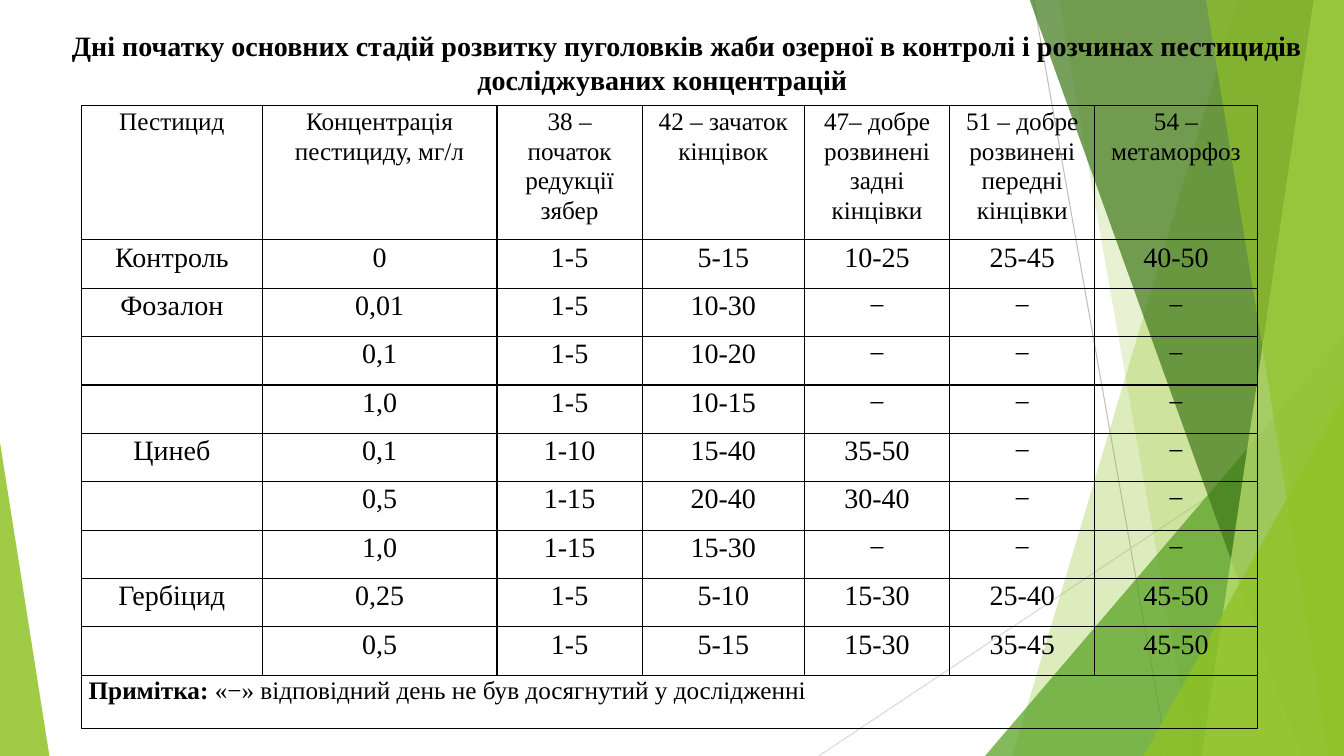
import pptx
import pptx.util
import pptx.dml.color
import pptx.enum.shapes
import pptx.enum.text
import pptx.oxml.ns
from lxml import etree

SCALE = 9144  # EMU in one px, 100 px to the inch
FONT = "Times New Roman"
COLORS = {
    "text": "000000", "border": "000000", "gray": "BFBFBF", "pale_gray": "D9D9D9",
    "leaf": "90C226", "green": "54A021", "forest": "3F7819", "lime": "C0E474",
}
ALIGN = pptx.enum.text.PP_ALIGN
SHAPE = pptx.enum.shapes.MSO_SHAPE
qn = pptx.oxml.ns.qn


def px(value):
    return pptx.util.Emu(value * SCALE)


def rgb(name):
    return pptx.dml.color.RGBColor.from_string(COLORS[name])


class SlideBuilder:
    def __init__(self, width, height):
        self.deck = pptx.Presentation()
        self.deck.slide_width, self.deck.slide_height = px(width), px(height)
        self.slide = self.deck.slides.add_slide(self.deck.slide_layouts[5])
        self.shapes = self.slide.shapes

    def line(self, start, end, color):
        ray = self.shapes.add_connector(
            pptx.enum.shapes.MSO_CONNECTOR.STRAIGHT, *map(px, start + end))
        ray.line.color.rgb = rgb(color)
        ray.line.width = pptx.util.Pt(0.75)
        etree.SubElement(ray.element.spPr, qn("a:effectLst"))

    def tint(self, facet, color, opacity):
        facet.shadow.inherit = False
        facet.fill.solid()
        facet.fill.fore_color.rgb = rgb(color)
        facet.line.fill.background()
        fill_color = next(facet.element.iter(qn("a:srgbClr")))
        etree.SubElement(fill_color, qn("a:alpha"), val=str(opacity * 1000))

    def facet(self, top_left, bottom_left, color, opacity):
        outline = self.shapes.build_freeform(top_left, -1, scale=SCALE)
        outline.add_line_segments([(1333, -1), (1333, 750), (bottom_left, 750)])
        self.tint(outline.convert_to_shape(), color, opacity)

    def triangle(self, box, apex, color, opacity):
        corner = self.shapes.add_shape(SHAPE.ISOSCELES_TRIANGLE, *map(px, box))
        corner.adjustments[0] = apex
        self.tint(corner, color, opacity)

    def style(self, paragraph, size, align, bold=None):
        paragraph.alignment = align
        paragraph.font.name = FONT
        paragraph.font.size = pptx.util.Pt(size)
        paragraph.font.color.rgb = rgb("text")
        paragraph.font.bold = bold

    def title(self, box, wording):
        heading = self.shapes.title
        heading.left, heading.top, heading.width, heading.height = map(px, box)
        heading.element.getparent().append(heading.element)  # bring to front
        frame = heading.text_frame
        frame.text = wording
        frame.word_wrap = True
        frame.auto_size = pptx.enum.text.MSO_AUTO_SIZE.SHAPE_TO_FIT_TEXT
        frame.vertical_anchor = pptx.enum.text.MSO_ANCHOR.MIDDLE
        paragraph = frame.paragraphs[0]
        paragraph.line_spacing = 1.0
        properties = paragraph._p.get_or_add_pPr()
        properties.set("marL", "0")
        properties.set("indent", str(px(49)))
        self.style(paragraph, 20, ALIGN.CENTER, True)

    def cell(self, cell, runs, size, align):
        cell.margin_left = cell.margin_right = px(7)
        cell.margin_top = cell.margin_bottom = 0
        paragraph = cell.text_frame.paragraphs[0]
        paragraph.line_spacing = 1.07
        self.style(paragraph, size, align, False)
        for wording, bold in runs:
            run = paragraph.add_run()
            run.text = wording
            if bold:
                run.font.bold = True
        properties = cell._tc.get_or_add_tcPr()
        for side in ("a:lnL", "a:lnR", "a:lnT", "a:lnB"):
            border = etree.SubElement(properties, qn(side), w="12700")
            fill = etree.SubElement(border, qn("a:solidFill"))
            etree.SubElement(fill, qn("a:srgbClr"), val=COLORS["border"])
        cell.fill.background()

    def table(self, left, top, columns, heights, rows, note):
        table = self.shapes.add_table(
            len(heights), len(columns), px(left), px(top),
            px(sum(columns)), px(sum(heights))).table
        table.first_row = table.horz_banding = False
        for column, width in zip(table.columns, columns):
            column.width = px(width)
        for row, height in zip(table.rows, heights):
            row.height = px(height)
        for r, values in enumerate(rows):
            for c, value in enumerate(values):
                runs = [(value, False)] if value else []
                self.cell(table.cell(r, c), runs, 20 if r else 18, ALIGN.CENTER)
        last = len(heights) - 1
        table.cell(last, 0).merge(table.cell(last, len(columns) - 1))
        for c in range(len(columns)):
            self.cell(table.cell(last, c), [] if c else note, 18, ALIGN.LEFT)


STAGES = [
    ["Пестицид", "Концентрація пестициду, мг/л", "38 – початок редукції зябер",
     "42 – зачаток кінцівок", "47– добре розвинені задні кінцівки",
     "51 – добре розвинені передні кінцівки", "54 –метаморфоз"],
    ["Контроль", "0", "1-5", "5-15", "10-25", "25-45", "40-50"],
    ["Фозалон", "0,01", "1-5", "10-30", "−", "−", "−"],
    ["", "0,1", "1-5", "10-20", "−", "−", "−"],
    ["", "1,0", "1-5", "10-15", "−", "−", "−"],
    ["Цинеб", "0,1", "1-10", "15-40", "35-50", "−", "−"],
    ["", "0,5", "1-15", "20-40", "30-40", "−", "−"],
    ["", "1,0", "1-15", "15-30", "−", "−", "−"],
    ["Гербіцид", "0,25", "1-5", "5-10", "15-30", "25-40", "45-50"],
    ["", "0,5", "1-5", "5-15", "15-30", "35-45", "45-50"],
]
NOTE = [("Примітка:", True),
        (" «−» відповідний день не був досягнутий у дослідженні", False)]


def main():
    page = SlideBuilder(1333, 750)

    # Green facets of the background
    page.line((1025, 0), (1158, 750), "gray")
    page.line((1333, 403), (812, 750), "pale_gray")
    page.facet(1228, 1004, "leaf", 30)
    page.facet(1050, 1183, "leaf", 20)
    page.triangle((977, 333, 356, 417), 1, "green", 72)
    page.facet(1021, 1291, "forest", 70)
    page.facet(1303, 1192, "lime", 70)
    page.facet(1196, 1318, "leaf", 65)
    page.triangle((1134, 393, 199, 357), 1, "leaf", 80)
    page.triangle((0, 439, 49, 311), 0, "leaf", 85)

    # Days on which each stage begins
    page.table(81, 105, [179, 233, 144, 161, 144, 144, 161],
               [133] + [48] * 9 + [53], STAGES, NOTE)

    # Heading
    page.title((-53, 23, 1420, 77),
               "Дні початку основних стадій розвитку пуголовків жаби озерної "
               "в контролі і розчинах пестицидів досліджуваних концентрацій")

    page.deck.save("out.pptx")


if __name__ == "__main__":
    main()
